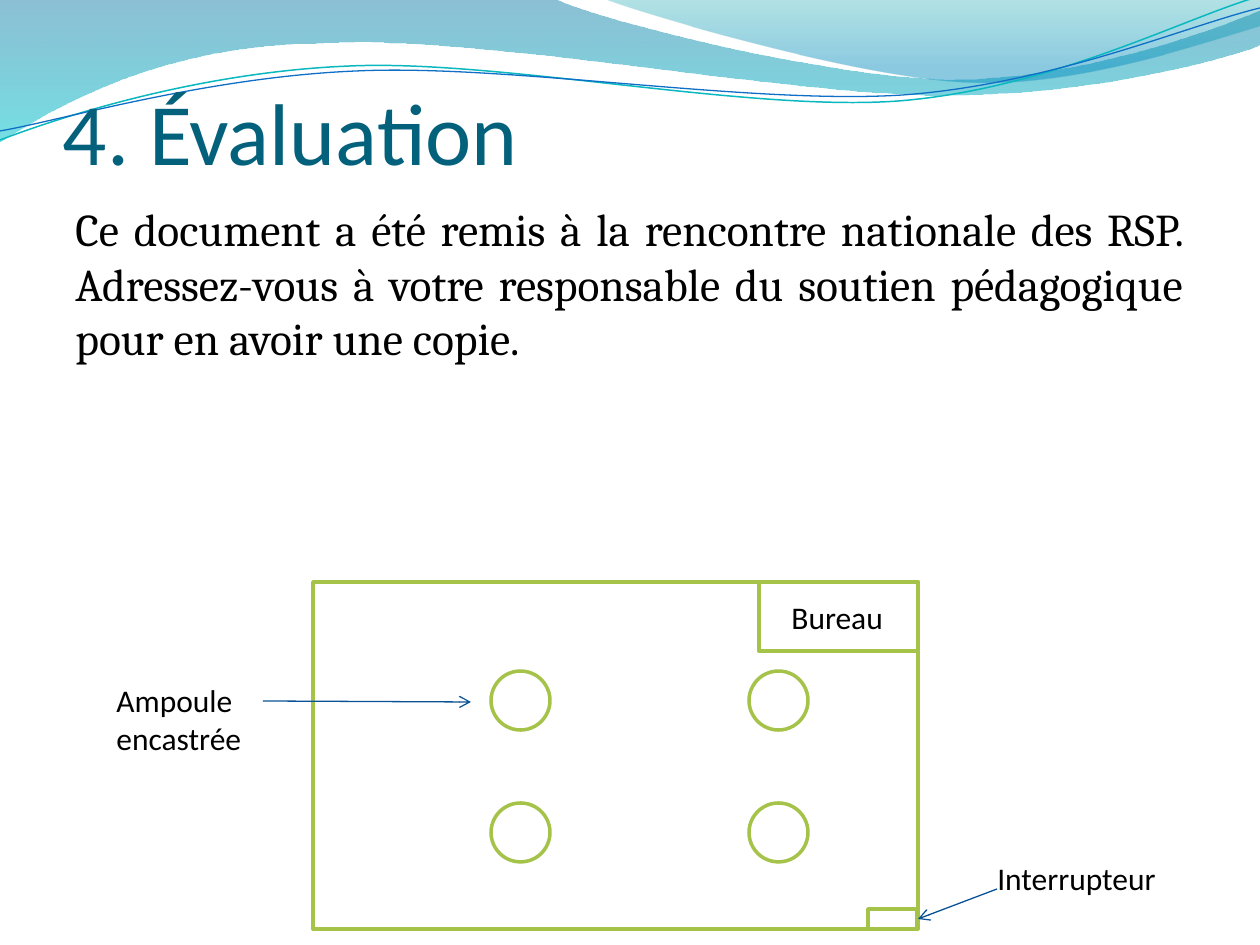
import itertools

import pptx
import pptx.dml.color
import pptx.enum.shapes
import pptx.enum.text
import pptx.oxml.ns
import pptx.util
from lxml import etree

PX = 914400 / 126
COLORS = {
    "title": "04617B", "text": "000000", "paper": "FFFFFF", "plan": "A5C249",
    "arrow": "095295", "teal": "0AB8BF", "blue": "0F6FC6",
    "wave_top": "0074A1", "wave_bottom": "00C6CF",
    "crest_top": "00A1A9", "crest_bottom": "008BBF",
}
# Each outline is a start point, then corners (one point) or curves (three points).
WAVE = [(0, -1), [(555, -1)],
        [(600, 21), (837, 79), (955, 79)], [(1075, 79), (1207, 33), (1260, 11)],
        [(1261, 45)],
        [(1239, 55), (1096, 96), (940, 95)], [(784, 95), (481, 35), (324, 43)],
        [(163, 44), (58, 105), (-1, 142)]]
CREST = [(604, -1), [(641, 14), (859, 78), (969, 82)],
         [(1079, 87), (1211, 40), (1260, 26)], [(1260, 0)]]
TEAL_LINE = [(0, 140), [(60, 117), (199, 72), (349, 66)],
             [(498, 59), (747, 112), (898, 101)], [(1050, 89), (1182, 19), (1257, -3)]]
BLUE_LINE = [(0, 131), [(59, 121), (207, 77), (357, 71)],
             [(508, 64), (752, 105), (903, 95)], [(1053, 84), (1186, 26), (1260, 8)]]


def emu(*lengths):
    return [round(length * PX) for length in lengths]


def rgb(name):
    return pptx.dml.color.RGBColor.from_string(COLORS[name])


def add_tag(parent, name, **attributes):
    return etree.SubElement(parent, pptx.oxml.ns.qn(name), **attributes)


def set_line(shape, color, width):
    shape.line.color.rgb = rgb(color)
    shape.line.width = pptx.util.Pt(width)


def add_outline(page, outline, closed):
    """Draw straight sides between the end points, then bend those that are curves."""
    start, *segments = outline
    builder = page.shapes.build_freeform(*emu(*start))
    builder.add_line_segments([emu(*segment[-1]) for segment in segments], close=closed)
    shape = builder.convert_to_shape()
    shape.shadow.inherit = False
    sides = list(shape._element.spPr.iter(pptx.oxml.ns.qn("a:lnTo")))
    for side, segment in zip(sides, segments):
        if len(segment) == 1:
            continue
        side.tag = pptx.oxml.ns.qn("a:cubicBezTo")
        for point in list(side):
            side.remove(point)
        for x, y in itertools.starmap(emu, segment):
            add_tag(side, "a:pt", x=str(x - shape.left), y=str(y - shape.top))
    return shape


def add_wave(page, outline, stops):
    """Add a closed band; stops are (position, color, opacity in percent)."""
    shape = add_outline(page, outline, True)
    shape.line.fill.background()
    shape.fill.gradient()
    shape.fill.gradient_angle = 270
    for stop, (position, color, _) in zip(shape.fill.gradient_stops, stops):
        stop.position = position
        stop.color.rgb = rgb(color)
    tints = shape._element.spPr.iter(pptx.oxml.ns.qn("a:srgbClr"))
    for tint, (_, _, opacity) in zip(tints, stops):
        add_tag(tint, "a:alpha", val=str(opacity * 1000))


def add_curve(page, outline, color, width):
    shape = add_outline(page, outline, False)
    shape.fill.background()
    set_line(shape, color, width)


def add_text(page, box, text, size, color="text", font="Calibri"):
    frame = page.shapes.add_textbox(*emu(*box)).text_frame
    frame.word_wrap = True
    para = frame.paragraphs[0]
    para.text = text
    para.font.size = pptx.util.Pt(size)
    para.font.name = font
    para.font.color.rgb = rgb(color)
    return frame


def add_plan_shape(page, kind, box):
    shape = page.shapes.add_shape(kind, *emu(*box))
    shape.shadow.inherit = False
    shape.fill.solid()
    shape.fill.fore_color.rgb = rgb("paper")
    set_line(shape, "plan", 2)


def add_arrow(page, start, end):
    arrow = page.shapes.add_connector(
        pptx.enum.shapes.MSO_CONNECTOR.STRAIGHT, *emu(*start, *end))
    set_line(arrow, "arrow", 0.75)
    add_tag(arrow.line._get_or_add_ln(), "a:tailEnd", type="arrow")
    add_tag(arrow._element.spPr, "a:effectLst")


def add_waves(page):
    add_wave(page, WAVE, [(0, "wave_top", 45), (1, "wave_bottom", 55)])
    add_wave(page, CREST, [(0, "crest_top", 30), (0.8, "crest_bottom", 45)])
    add_curve(page, TEAL_LINE, "teal", 0.85)
    add_curve(page, BLUE_LINE, "blue", 0.75)


def add_heading_and_body(page):
    title = add_text(page, (63, 26, 1134, 157), "4. Évaluation", 50, "title")
    title.vertical_anchor = pptx.enum.text.MSO_ANCHOR.BOTTOM
    title.margin_left = title.margin_right = title.margin_bottom = 0
    body = add_text(
        page, (63, 195, 1134, 735),
        "Ce document a été remis à la rencontre nationale des RSP. Adressez-vous à "
        "votre responsable du soutien pédagogique pour en avoir une copie.",
        26, font="Cambria")
    body.paragraphs[0].alignment = pptx.enum.text.PP_ALIGN.JUSTIFY
    body.paragraphs[0].space_before = pptx.util.Pt(5)


def add_room_plan(page):
    kinds = pptx.enum.shapes.MSO_SHAPE
    room, desk, switch = (313, 582, 605, 347), (759, 582, 159, 69), (868, 909, 49, 20)
    for box in (room, desk):
        add_plan_shape(page, kinds.RECTANGLE, box)
    for left, top in itertools.product((491, 749), (671, 803)):
        add_plan_shape(page, kinds.OVAL, (left, top, 59, 59))
    add_plan_shape(page, kinds.RECTANGLE, switch)
    add_arrow(page, (997, 889), (918, 919))
    add_arrow(page, (263, 701), (471, 702))
    add_text(page, (779, 592, 159, 50), "Bureau", 18)
    add_text(page, (104, 675, 159, 89), "Ampoule encastrée", 18)
    add_text(page, (985, 853, 190, 50), "Interrupteur", 18)


def main():
    deck = pptx.Presentation()
    deck.slide_width, deck.slide_height = emu(1260, 945)
    page = deck.slides.add_slide(deck.slide_layouts[6])
    add_waves(page)
    add_heading_and_body(page)
    add_room_plan(page)
    deck.save("out.pptx")


if __name__ == "__main__":
    main()
